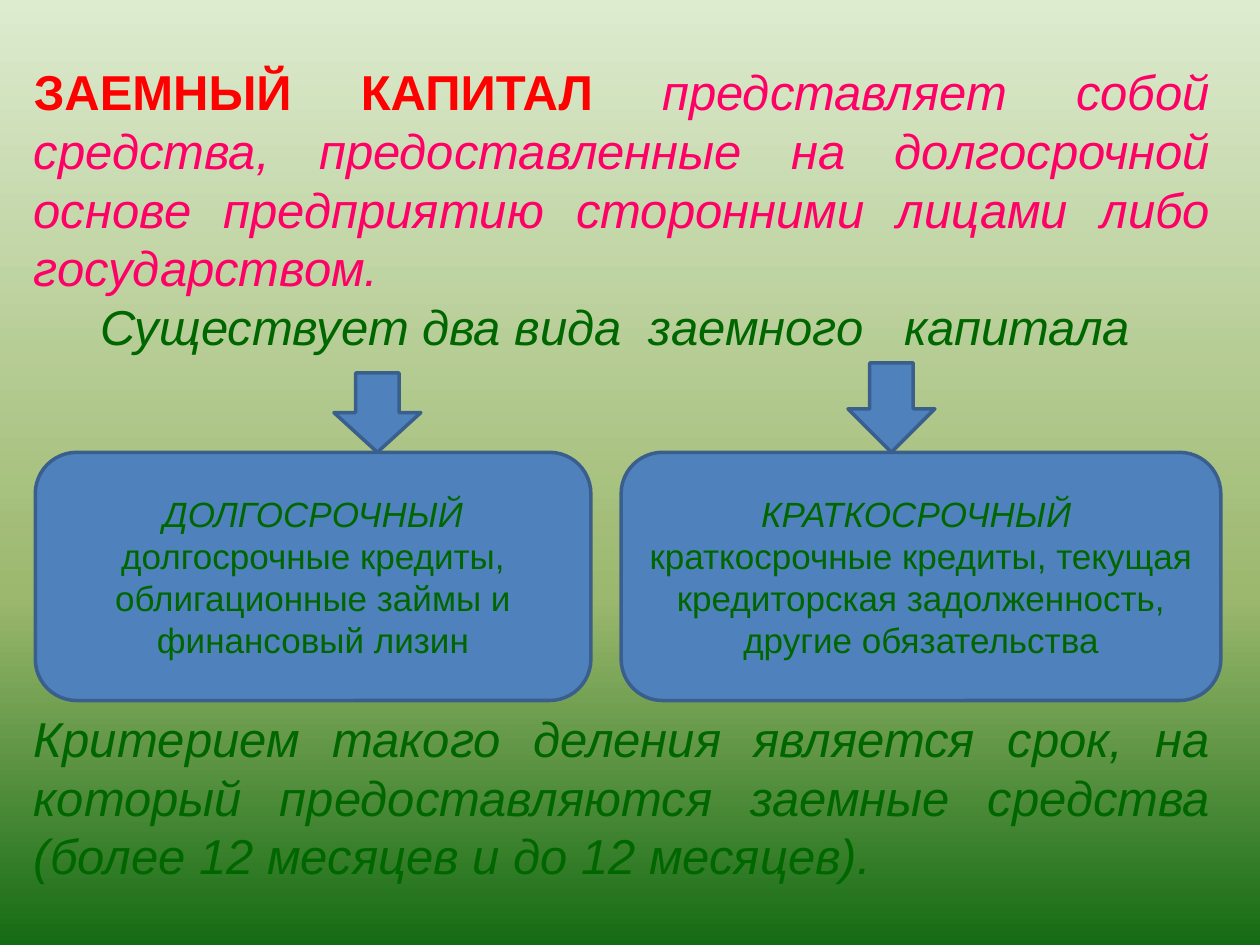
from copy import deepcopy
from dataclasses import dataclass

from pptx import Presentation
from pptx.dml.color import RGBColor as Color
from pptx.enum.shapes import MSO_SHAPE as Preset
from pptx.enum.text import MSO_ANCHOR as Anchor, MSO_AUTO_SIZE as AutoSize, PP_ALIGN as Align
from pptx.oxml.ns import qn
from pptx.util import Inches, Pt


@dataclass(frozen=True)
class Theme:
    font: str = "Arial"
    body_size: float = 28
    card_size: float = 20
    line_ratio: float = 1.2
    term: str = "FF0000"
    definition: str = "FF0066"
    text: str = "006600"
    fill: str = "4F81BD"
    outline: str = "3A5F8C"
    outline_width: float = 2
    background: tuple = ((0, "DDEBCF"), (0.63, "9CB86E"), (1, "156B13"))


@dataclass(frozen=True)
class Run:
    text: str
    color: str
    bold: bool = False
    italic: bool = False


@dataclass(frozen=True)
class Card:
    left: float
    width: float
    heading: str
    details: str
    arrow_left: float
    arrow_top: float


THEME = Theme()
CARD_TOP, CARD_HEIGHT, ARROW_WIDTH = 3.59, 1.97, 0.69
DIAGRAM_LINES = 6  # text lines left free for the diagram

CARDS = (
    Card(0.28, 4.41, "ДОЛГОСРОЧНЫЙ",
         "долгосрочные кредиты, облигационные займы и финансовый лизин", 2.65, 2.96),
    Card(4.93, 4.76, "КРАТКОСРОЧНЫЙ ",
         "краткосрочные кредиты, текущая кредиторская задолженность, другие обязательства",
         6.73, 2.88),
)

BODY = (
    (Align.JUSTIFY, 0, (
        Run("ЗАЕМНЫЙ КАПИТАЛ ", THEME.term, bold=True),
        Run("представляет собой средства, предоставленные на долгосрочной основе "
            "предприятию сторонними лицами либо государством. ", THEME.definition, italic=True))),
    (Align.CENTER, 0, (
        Run("Существует два вида  заемного   капитала ", THEME.text, italic=True),)),
    (Align.JUSTIFY, DIAGRAM_LINES, (
        Run("Критерием такого деления является срок, на который предоставляются "
            "заемные средства (более 12 месяцев и до 12 месяцев).", THEME.text, italic=True),)),
)


def paint_background(slide) -> None:
    fill = slide.background.fill
    fill.gradient()
    fill.gradient_angle = 270
    # The default gradient has two stops; add the middle one
    stop_list = slide.element.find(".//" + qn("a:gsLst"))
    stop_list.insert(1, deepcopy(stop_list[0]))
    for stop, (position, color) in zip(fill.gradient_stops, THEME.background):
        stop.position = position
        stop.color.rgb = Color.from_string(color)


def write_paragraphs(frame, paragraphs: tuple, size: float) -> None:
    line_height = size * THEME.line_ratio
    for index, (alignment, lines_before, runs) in enumerate(paragraphs):
        paragraph = frame.add_paragraph() if index else frame.paragraphs[0]
        paragraph.alignment = alignment
        paragraph.line_spacing = Pt(line_height)
        paragraph.space_before = Pt(lines_before * line_height)
        for item in runs:
            run = paragraph.add_run()
            run.text = item.text
            font = run.font
            font.name, font.size = THEME.font, Pt(size)
            font.bold, font.italic = item.bold, item.italic
            font.color.rgb = Color.from_string(item.color)


def add_body(slide) -> None:
    box = slide.shapes.add_textbox(Inches(0.17), Inches(0.44), Inches(9.53), Inches(6.7))
    frame = box.text_frame
    frame.word_wrap = True
    frame.auto_size = AutoSize.SHAPE_TO_FIT_TEXT
    write_paragraphs(frame, BODY, THEME.body_size)


def add_block(slide, preset: Preset, left: float, top: float, width: float, height: float):
    shape = slide.shapes.add_shape(
        preset, Inches(left), Inches(top), Inches(width), Inches(height))
    shape.shadow.inherit = False
    shape.fill.solid()
    shape.fill.fore_color.rgb = Color.from_string(THEME.fill)
    shape.line.color.rgb = Color.from_string(THEME.outline)
    shape.line.width = Pt(THEME.outline_width)
    return shape


def add_card(slide, card: Card) -> None:
    shape = add_block(slide, Preset.ROUNDED_RECTANGLE,
                      card.left, CARD_TOP, card.width, CARD_HEIGHT)
    frame = shape.text_frame
    frame.word_wrap = True
    frame.vertical_anchor = Anchor.MIDDLE
    write_paragraphs(frame, (
        (Align.CENTER, 0, (Run(card.heading, THEME.text, italic=True),)),
        (Align.CENTER, 0, (Run(card.details, THEME.text),)),
    ), THEME.card_size)


def add_arrow(slide, card: Card) -> None:
    add_block(slide, Preset.DOWN_ARROW, card.arrow_left, card.arrow_top,
              ARROW_WIDTH, CARD_TOP - card.arrow_top)


def main() -> None:
    presentation = Presentation()
    presentation.slide_width, presentation.slide_height = Inches(10), Inches(7.5)
    slide = presentation.slides.add_slide(presentation.slide_layouts[6])

    paint_background(slide)
    add_body(slide)
    # Two kinds of capital, then the arrows that lead to them
    for card in CARDS:
        add_card(slide, card)
    for card in CARDS:
        add_arrow(slide, card)

    presentation.save("out.pptx")


if __name__ == "__main__":
    main()
